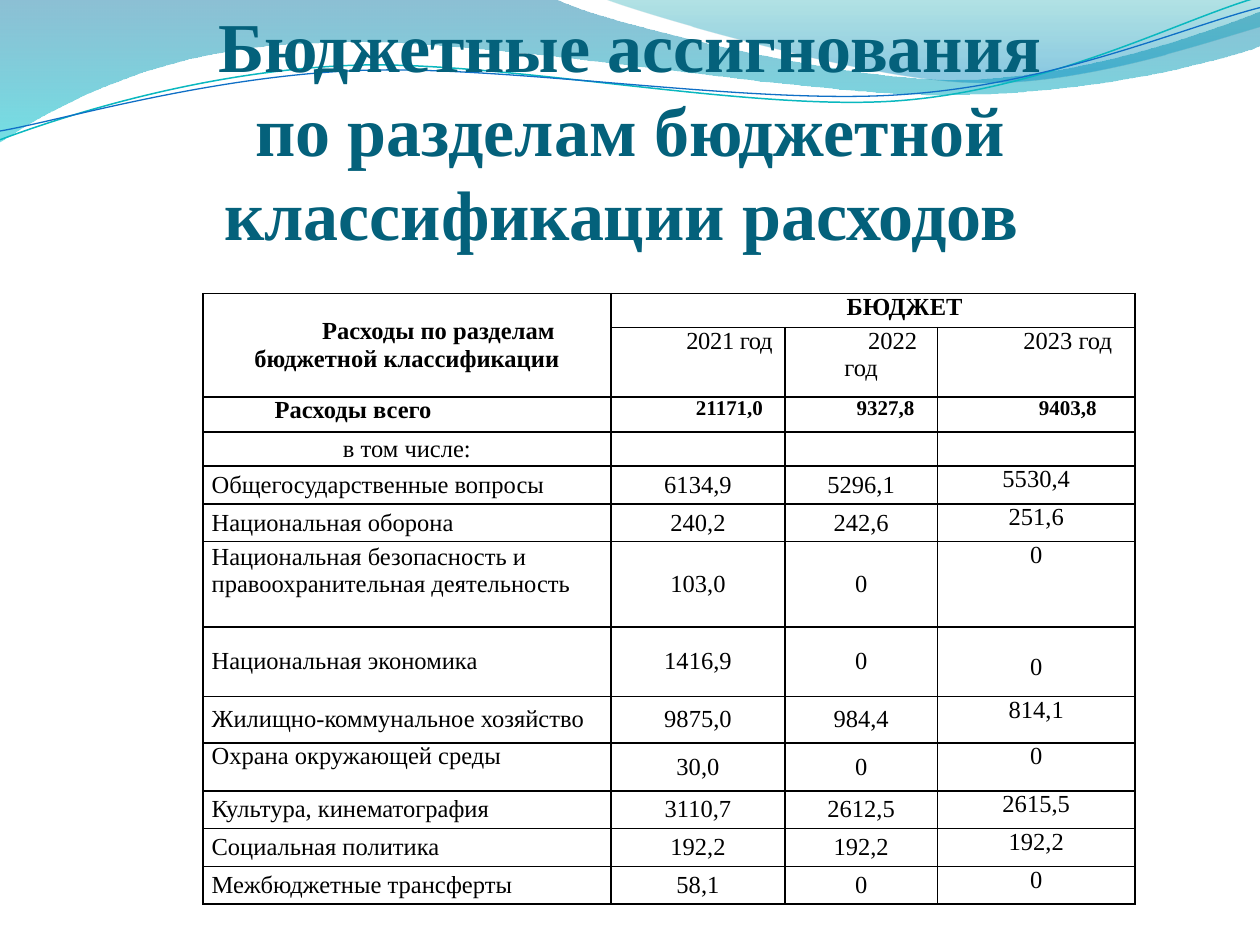
from itertools import product
from math import cos, radians, sin
from lxml.etree import SubElement as Sub
from pptx import Presentation as Deck
from pptx.dml.color import RGBColor as Color
from pptx.enum.text import MSO_ANCHOR as Anchor, PP_ALIGN as Align
from pptx.oxml.ns import qn
from pptx.util import Inches, Pt

BLACK = Color(0x00, 0x00, 0x00)
TEAL = Color(0x04, 0x61, 0x7B)
SEA = Color(0x0A, 0xB8, 0xBF)
BLUE = Color(0x0F, 0x6F, 0xC6)
DEEP = Color(0x00, 0x74, 0xA1)
AQUA = Color(0x00, 0xC6, 0xCF)
GREEN = Color(0x00, 0xA1, 0xA9)
SKY = Color(0x00, 0x8B, 0xBF)
FACE = "Times New Roman"
TURN = 357.3

BROAD = [(0, 0), (4.4, -0.01), (4.76, 0.17, 6.64, 0.63, 7.58, 0.63),
         (8.53, 0.63, 9.58, 0.26, 10, 0.09), (10.01, 0.36),
         (9.83, 0.44, 8.7, 0.76, 7.46, 0.75), (6.22, 0.75, 3.82, 0.28, 2.57, 0.34),
         (1.29, 0.36, 0.46, 0.83, -0.01, 1.13), (0, 0)]
SMALL = [(4.79, -0.01), (5.09, 0.11, 6.82, 0.62, 7.69, 0.65),
         (8.56, 0.69, 9.61, 0.32, 10, 0.21), (10, 0), (4.79, -0.01)]
UPPER = [(0, 1.11), (0.48, 0.93, 1.58, 0.57, 2.77, 0.52),
         (3.95, 0.47, 5.93, 0.89, 7.13, 0.8), (8.33, 0.71, 9.38, 0.15, 9.98, -0.02)]
LOWER = [(0, 1.04), (0.47, 0.96, 1.64, 0.61, 2.83, 0.56),
         (4.03, 0.51, 5.97, 0.84, 7.17, 0.75), (8.36, 0.67, 9.41, 0.21, 10, 0.06)]

WIDTHS = [3.24, 1.38, 1.21, 1.57]
HEIGHTS = [0.27, 0.55, 0.28, 0.27, 0.3, 0.3, 0.55, 0.55, 0.37, 0.38, 0.3, 0.3, 0.3]
ROWS = [
    ["Расходы по разделам бюджетной классификации", "БЮДЖЕТ", "", ""],
    ["", "2021 год", "2022 год", "2023 год"],
    ["Расходы всего", "21171,0", "9327,8", "9403,8"],
    ["в том числе:", "", "", ""],
    ["Общегосударственные вопросы", "6134,9", "5296,1", "5530,4"],
    ["Национальная оборона", "240,2", "242,6", "251,6"],
    ["Национальная безопасность и правоохранительная деятельность", "103,0", "0", "0"],
    ["Национальная экономика", "1416,9", "0", "0"],
    ["Жилищно-коммунальное хозяйство", "9875,0", "984,4", "814,1"],
    ["Охрана окружающей среды", "30,0", "0", "0"],
    ["Культура, кинематография", "3110,7", "2612,5", "2615,5"],
    ["Социальная политика", "192,2", "192,2", "192,2"],
    ["Межбюджетные трансферты", "58,1", "0", "0"],
]
YEARS, TOTAL, NOTE = 1, 2, 3
TOP_NAME = (9, 0)
LONG_NAME = (6, 0)
LOW_ZERO = (7, 3)
LEFT_CELLS = [(TOTAL, 0), (TOTAL, 2)]
LINE = 0.21


def apply(item, values):
    for name, value in values.items():
        setattr(item, name, value)


def place(x, y, box, turn):
    left, top, width, height = box
    dx, dy = x - left - width / 2, y - top - height / 2
    angle = radians(-turn)
    return (Inches(dx * cos(angle) - dy * sin(angle) + width / 2),
            Inches(dx * sin(angle) + dy * cos(angle) + height / 2))


def outline(slide, path, box, turn=0, close=True):
    pen = slide.shapes.build_freeform(0, 0)
    pen.add_line_segments([(Inches(1), Inches(1))], close=False)
    shape = pen.convert_to_shape()
    names = ("left", "top", "width", "height")
    apply(shape, dict(zip(names, map(Inches, box)), rotation=turn))
    shape.shadow.inherit = False
    track = next(shape.element.iter(qn("a:path")))
    for node in list(track):
        track.remove(node)
    track.set("w", str(shape.width))
    track.set("h", str(shape.height))
    for index, part in enumerate(path):
        kind = "cubicBezTo" if len(part) == 6 else "lnTo" if index else "moveTo"
        move = Sub(track, qn(f"a:{kind}"))
        for x, y in zip(part[::2], part[1::2]):
            px, py = place(x, y, box, turn)
            Sub(move, qn("a:pt"), x=str(px), y=str(py))
    if close:
        Sub(track, qn("a:close"))
    return shape


def add_wave(slide, path, box, stops):
    shape = outline(slide, path, box)
    shape.line.fill.background()
    shape.fill.gradient()
    shape.fill.gradient_angle = 270
    for stop, (spot, color, alpha) in zip(shape.fill.gradient_stops, stops):
        stop.position = spot
        stop.color.rgb = color
    for node, (_, _, alpha) in zip(shape.element.iter(qn("a:srgbClr")), stops):
        Sub(node, qn("a:alpha"), val=str(alpha * 1000))


def add_curve(slide, path, box, color, width):
    shape = outline(slide, path, box, TURN, False)
    shape.fill.background()
    shape.line.color.rgb = color
    shape.line.width = Pt(width)


def style(run, size, color, bold):
    apply(run.font, {"name": FACE, "size": Pt(size), "bold": bold})
    run.font.color.rgb = color


def add_title(slide):
    frame = slide.shapes.add_textbox(Inches(0.5), Inches(0.77), Inches(9), Inches(1.25)).text_frame
    apply(frame, {"word_wrap": True, "vertical_anchor": Anchor.BOTTOM, "margin_left": 0,
                  "margin_right": 0, "margin_top": Inches(0.05), "margin_bottom": 0})
    para = frame.paragraphs[0]
    para.text = "Бюджетные ассигнования\vпо разделам бюджетной классификации расходов "
    para.alignment = Align.CENTER
    for run in para.runs:
        style(run, 40, TEAL, True)


def add_edges(cell):
    props = cell._tc.get_or_add_tcPr()
    for spot, side in enumerate(("L", "R", "T", "B")):
        edge = props.makeelement(qn(f"a:ln{side}"), {"w": str(Pt(1))})
        fill = Sub(edge, qn("a:solidFill"))
        Sub(fill, qn("a:srgbClr"), val=str(BLACK))
        props.insert(spot, edge)


def fill_cell(cell, row, col, text):
    head, spot = row <= TOTAL, (row, col)
    middle = spot == (0, 0) if head else col < 3 and spot != TOP_NAME
    left = spot in LEFT_CELLS or (col == 0 and row > NOTE)
    apply(cell, {"margin_left": Inches(0.07), "margin_right": Inches(0.07),
                 "margin_top": Inches(LINE if spot == LOW_ZERO else 0),
                 "margin_bottom": Inches(LINE if spot == LONG_NAME else 0),
                 "vertical_anchor": Anchor.MIDDLE if middle else Anchor.TOP})
    cell.fill.background()
    add_edges(cell)
    para = cell.text_frame.paragraphs[0]
    para.alignment = Align.LEFT if left else Align.CENTER
    if head:
        para._p.get_or_add_pPr().set("indent", str(Inches(0.5)))
    if text:
        run = para.add_run()
        run.text = text
        style(run, 12 if row == TOTAL and col else 14, BLACK, head and row != YEARS)
        if spot == (YEARS, 1):
            run._r.get_or_add_rPr().set("spc", "-20")
    else:
        Sub(para._p, qn("a:endParaRPr"), sz="1400")


def add_budget(slide):
    frame = slide.shapes.add_table(len(ROWS), len(WIDTHS), Inches(1.61), Inches(2.33),
                                   Inches(sum(WIDTHS)), Inches(sum(HEIGHTS)))
    table = frame.table
    apply(table, {"first_row": False, "horz_banding": False})
    for col, width in zip(table.columns, WIDTHS):
        col.width = Inches(width)
    for row, height in zip(table.rows, HEIGHTS):
        row.height = Inches(height)
    for row, col in product(range(len(ROWS)), range(len(WIDTHS))):
        fill_cell(table.cell(row, col), row, col, ROWS[row][col])
    table.cell(0, 0).merge(table.cell(1, 0))
    table.cell(0, 1).merge(table.cell(0, 3))


def main():
    deck = Deck()
    apply(deck, {"slide_width": Inches(10), "slide_height": Inches(7.5)})
    slide = deck.slides.add_slide(deck.slide_layouts[6])
    add_wave(slide, BROAD, (-0.01, -0.01, 10.02, 1.14), [(0, DEEP, 45), (1, AQUA, 55)])
    add_wave(slide, SMALL, (4.79, -0.01, 5.21, 0.7), [(0, GREEN, 30), (0.8, SKY, 45)])
    add_curve(slide, UPPER, (-0.02, 0.22, 10.02, 0.71), SEA, 0.85)
    add_curve(slide, LOWER, (-0.02, 0.3, 10.03, 0.58), BLUE, 0.75)
    add_title(slide)
    add_budget(slide)
    deck.save("out.pptx")


if __name__ == "__main__":
    main()
